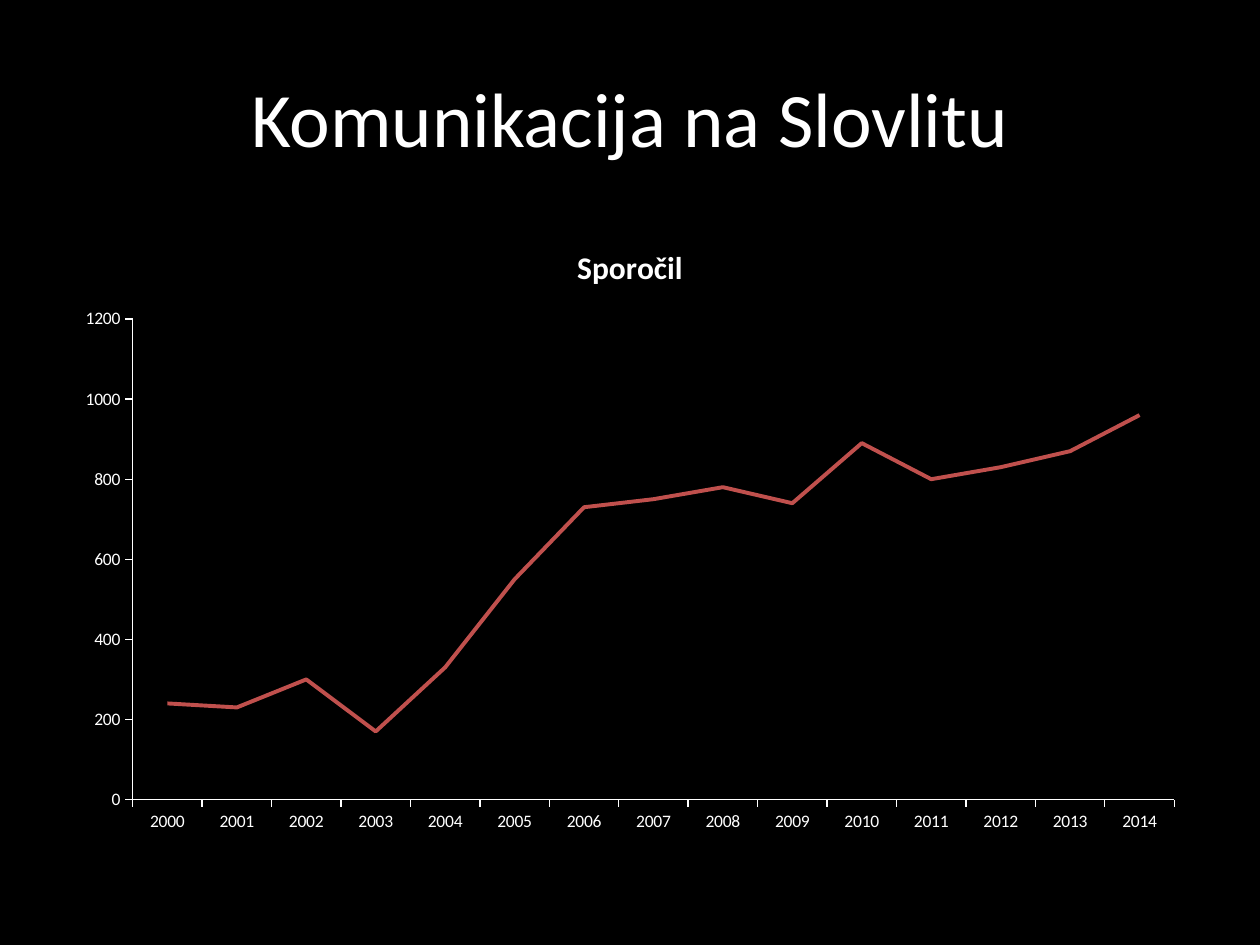
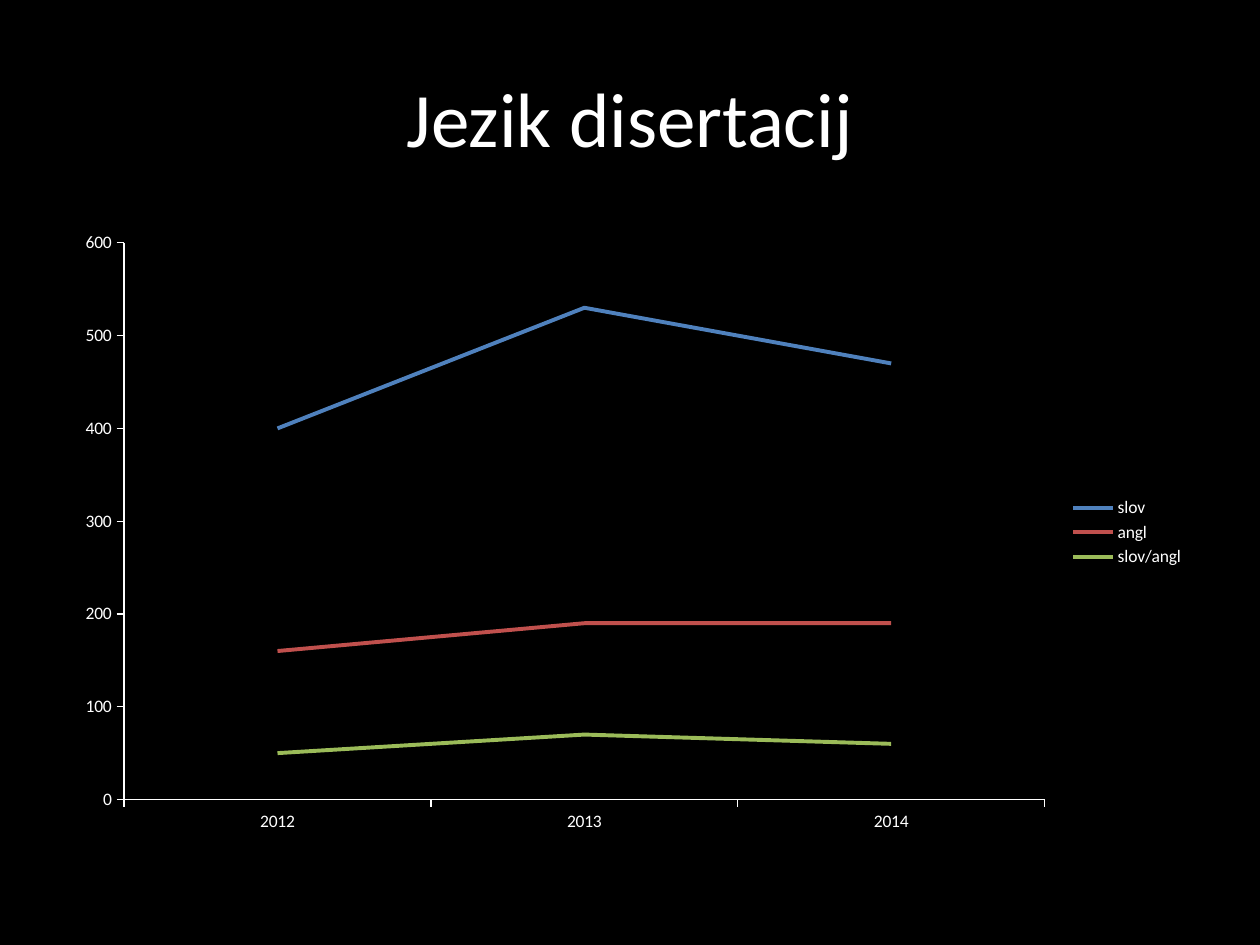
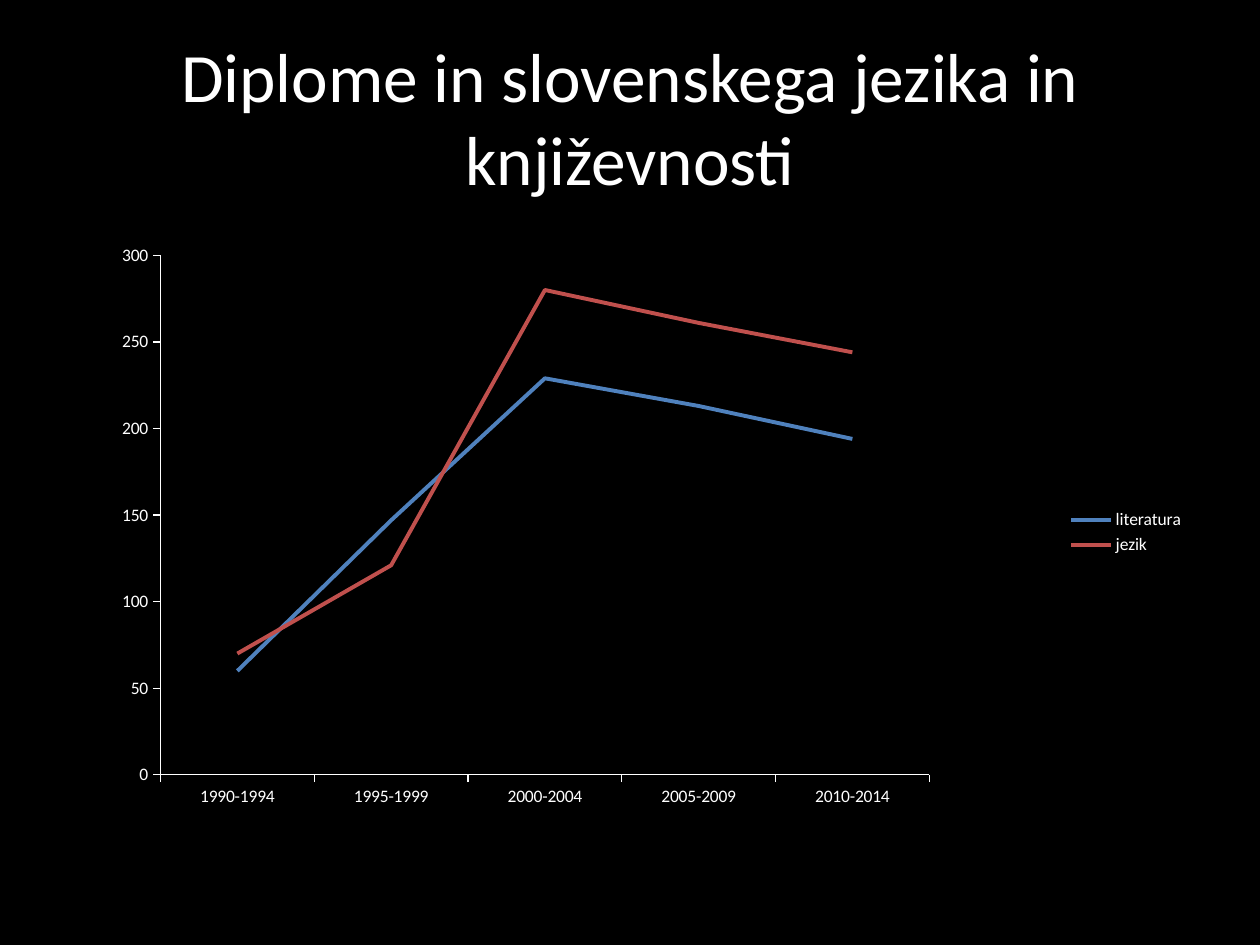
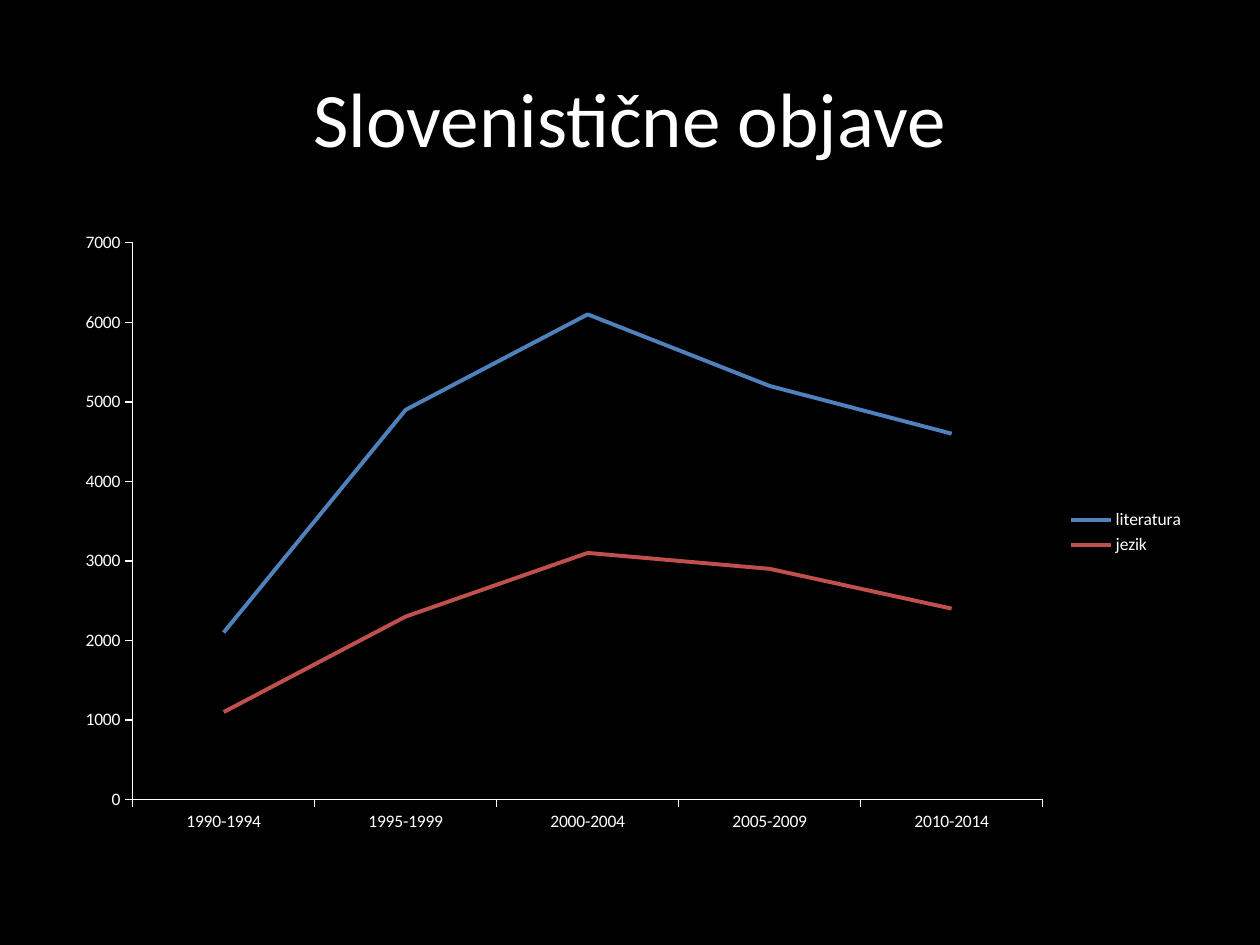
from dataclasses import dataclass

from lxml.etree import SubElement
from pptx import Presentation
from pptx.chart.data import CategoryChartData
from pptx.dml.color import RGBColor
from pptx.enum.chart import XL_CHART_TYPE, XL_LEGEND_POSITION, XL_TICK_MARK
from pptx.enum.text import MSO_ANCHOR, PP_ALIGN
from pptx.oxml.ns import qn
from pptx.util import Pt

PERIODS = ["1990-1994", "1995-1999", "2000-2004", "2005-2009", "2010-2014"]

SLIDES = [
    {
        "title": "Komunikacija na Slovlitu",
        "chart_title": "Sporočil",
        "categories": [str(year) for year in range(2000, 2015)],
        "series": [
            ("Sporočil", "red", [240, 230, 300, 170, 330, 550, 730, 750,
                                 780, 740, 890, 800, 830, 870, 960]),
        ],
    },
    {
        "title": "Jezik disertacij",
        "categories": ["2012", "2013", "2014"],
        "series": [
            ("slov", "blue", [400, 530, 470]),
            ("angl", "red", [160, 190, 190]),
            ("slov/angl", "green", [50, 70, 60]),
        ],
    },
    {
        "title": "Diplome in slovenskega jezika in književnosti",
        "title_size": 39.6,
        "categories": PERIODS,
        "plot": {"x": 0.086, "y": 0.056, "w": 0.678, "h": 0.833},
        "series": [
            ("literatura", "blue", [60, 147, 229, 213, 194]),
            ("jezik", "red", [70, 121, 280, 261, 244]),
        ],
    },
    {
        "title": "Slovenistične objave",
        "categories": PERIODS,
        "series": [
            ("literatura", "blue", [2100, 4900, 6100, 5200, 4600]),
            ("jezik", "red", [1100, 2300, 3100, 2900, 2400]),
        ],
    },
]


@dataclass(frozen=True)
class Theme:
    font: str = "Calibri"
    background: RGBColor = RGBColor(0, 0, 0)
    text: RGBColor = RGBColor(255, 255, 255)
    blue: RGBColor = RGBColor(0x4F, 0x81, 0xBD)
    red: RGBColor = RGBColor(0xC0, 0x50, 0x4D)
    green: RGBColor = RGBColor(0x9B, 0xBB, 0x59)
    title_size: float = 44
    chart_title_size: float = 18
    label_size: float = 10
    axis_width: float = 0.75
    series_width: float = 2.25


THEME = Theme()
SLIDE_WIDTH, SLIDE_HEIGHT = 720, 540
MARGIN = 36
CONTENT_WIDTH = SLIDE_WIDTH - 2 * MARGIN
TITLE_TOP, TITLE_HEIGHT = 21.6, 90
CHART_TOP, CHART_HEIGHT = 126, 356.4


def box(top, height):
    return [Pt(length) for length in (MARGIN, top, CONTENT_WIDTH, height)]


def apply_format(target, values):
    for name, value in values.items():
        setattr(target, name, value)


def style_font(font, size, bold=False):
    apply_format(font, {"name": THEME.font, "size": Pt(size), "bold": bold})
    font.color.rgb = THEME.text


def style_line(line, color, width):
    line.color.rgb = color
    line.width = Pt(width)


def add_title(slide, text, size):
    shape = slide.shapes.add_textbox(*box(TITLE_TOP, TITLE_HEIGHT))
    frame = shape.text_frame
    apply_format(frame, {"word_wrap": True, "vertical_anchor": MSO_ANCHOR.MIDDLE})
    paragraph = frame.paragraphs[0]
    paragraph.alignment = PP_ALIGN.CENTER
    run = paragraph.add_run()
    run.text = text
    style_font(run.font, size)


def set_plot_layout(chart, plot):
    plot_area = chart._chartSpace.chart.plotArea
    layout = plot_area.find(qn("c:layout"))
    if layout is None:
        layout = SubElement(plot_area, qn("c:layout"))
        plot_area.insert(0, layout)
    manual = SubElement(layout, qn("c:manualLayout"))
    settings = {"layoutTarget": "inner", "xMode": "edge", "yMode": "edge", **plot}
    for name, value in settings.items():
        SubElement(manual, qn(f"c:{name}")).set("val", str(value))


def add_line_chart(slide, content):
    data = CategoryChartData()
    data.categories = content["categories"]
    for name, _, values in content["series"]:
        data.add_series(name, values)
    chart = slide.shapes.add_chart(
        XL_CHART_TYPE.LINE, *box(CHART_TOP, CHART_HEIGHT), data
    ).chart
    style_font(chart.font, THEME.label_size)

    chart_title = content.get("chart_title")
    chart.has_title = bool(chart_title)
    chart.has_legend = not chart_title
    if chart_title:
        paragraph = chart.chart_title.text_frame.paragraphs[0]
        run = paragraph.add_run()
        run.text = chart_title
        style_font(run.font, THEME.chart_title_size, bold=True)
    else:
        apply_format(chart.legend, {
            "position": XL_LEGEND_POSITION.RIGHT, "include_in_layout": False,
        })

    for axis in (chart.category_axis, chart.value_axis):
        apply_format(axis, {
            "has_major_gridlines": False,
            "major_tick_mark": XL_TICK_MARK.OUTSIDE,
            "minor_tick_mark": XL_TICK_MARK.NONE,
        })
        style_line(axis.format.line, THEME.text, THEME.axis_width)

    plot = chart.plots[0]
    plot.vary_by_categories = False
    for series, (_, color, _) in zip(plot.series, content["series"]):
        series.smooth = False
        style_line(series.format.line, getattr(THEME, color), THEME.series_width)
    if "plot" in content:
        set_plot_layout(chart, content["plot"])


def main():
    presentation = Presentation()
    apply_format(presentation, {
        "slide_width": Pt(SLIDE_WIDTH), "slide_height": Pt(SLIDE_HEIGHT),
    })
    blank_layout = presentation.slide_layouts[6]
    for content in SLIDES:
        slide = presentation.slides.add_slide(blank_layout)
        fill = slide.background.fill
        fill.solid()
        fill.fore_color.rgb = THEME.background
        add_title(slide, content["title"], content.get("title_size", THEME.title_size))
        add_line_chart(slide, content)
    presentation.save("out.pptx")


if __name__ == "__main__":
    main()
